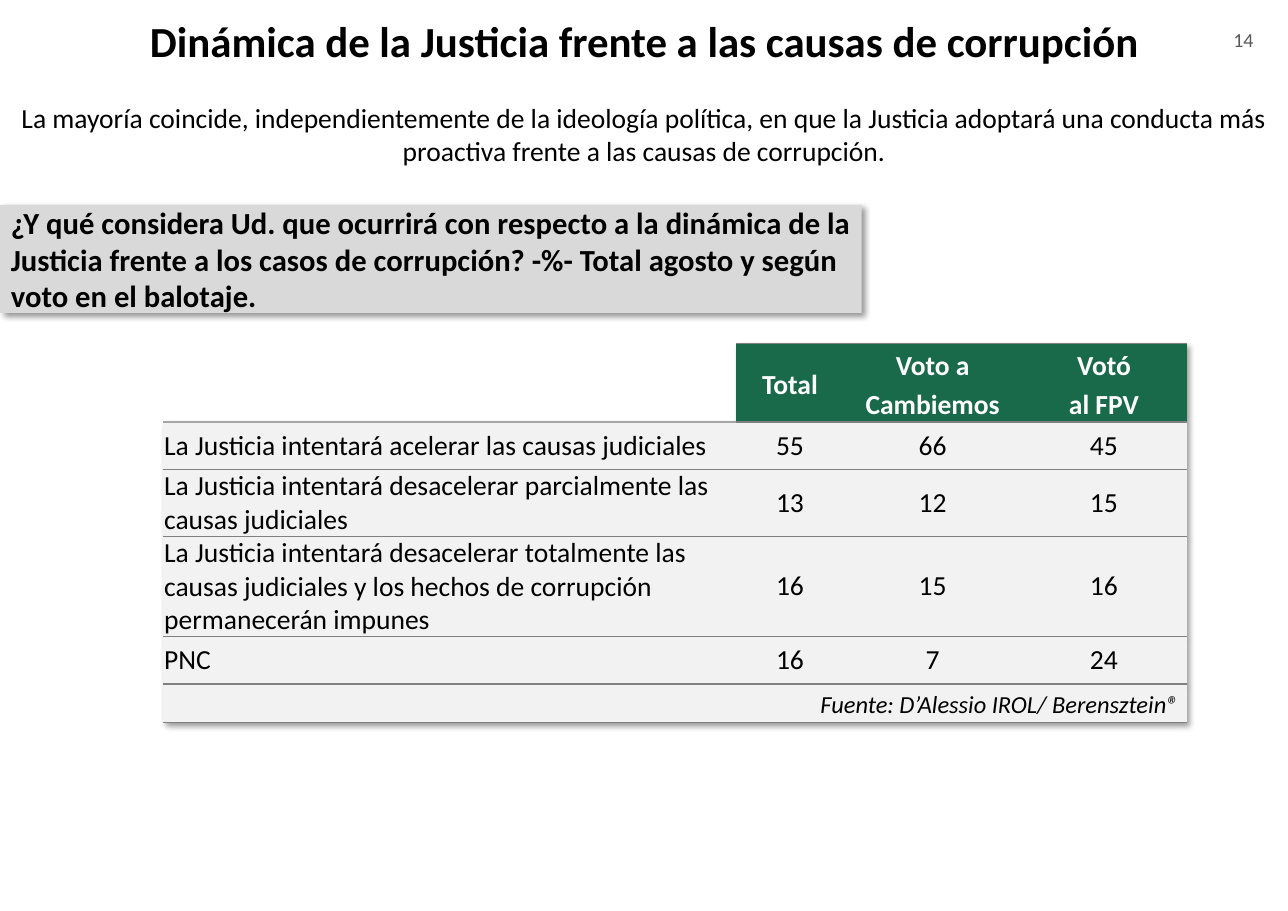
import lxml.etree
import pptx
import pptx.dml.color
import pptx.enum.shapes
import pptx.enum.text
import pptx.oxml
import pptx.oxml.ns
import pptx.util

PX = 9144
THEME = {
    "font": "Calibri",
    "black": "000000", "white": "FFFFFF", "number": "595959",
    "header": "19694B", "body": "F2F2F2", "question": "D9D9D9",
    "rule": "808080", "light_rule": "A6A6A6",
    "title_size": 28, "question_size": 20, "text_size": 18,
    "source_size": 16, "number_size": 13,
}
NO_STYLE = "{2D5ABB26-0587-4C30-8999-92F81FD0307C}"
ALIGN = pptx.enum.text.PP_ALIGN
MIDDLE = pptx.enum.text.MSO_ANCHOR.MIDDLE
rgb = pptx.dml.color.RGBColor.from_string
qn = pptx.oxml.ns.qn


def write(holder, text, size="text_size", color="black", bold=False, italic=False,
          align=ALIGN.CENTER, spacing=None, margins=(10, 5), anchor=MIDDLE):
    frame = holder.text_frame
    frame.word_wrap = True
    box = holder if hasattr(holder, "is_merge_origin") else frame
    box.vertical_anchor = anchor
    box.margin_left = box.margin_right = margins[0] * PX
    box.margin_top = box.margin_bottom = margins[1] * PX
    frame.text = text
    for paragraph in frame.paragraphs:
        paragraph.alignment = align
        if spacing:
            paragraph.line_spacing = spacing
        for run in paragraph.runs:
            run.font.name = THEME["font"]
            run.font.size = pptx.util.Pt(THEME[size])
            run.font.color.rgb = rgb(THEME[color])
            run.font.bold = bold
            run.font.italic = italic


def cast_shadow(effects):
    shadow = lxml.etree.SubElement(
        effects, qn("a:outerShdw"), blurRad="50800", dist="38100",
        dir="2700000", algn="tl", rotWithShape="0")
    color = lxml.etree.SubElement(shadow, qn("a:srgbClr"), val=THEME["black"])
    lxml.etree.SubElement(color, qn("a:alpha"), val="40000")


deck = pptx.Presentation()
deck.slide_width, deck.slide_height = 1169 * PX, 827 * PX
slide = deck.slides.add_slide(deck.slide_layouts[6])

texts = [
    ((1084, 20, 89, 44), "14",
     dict(size="number_size", color="number", anchor=pptx.enum.text.MSO_ANCHOR.TOP)),
    ((0, 86, 1169, 71),
     "La mayoría coincide, independientemente de la ideología política, en que la "
     "Justicia adoptará una conducta más proactiva frente a las causas de corrupción.", {}),
    ((0, -10, 1169, 94), "Dinámica de la Justicia frente a las causas de corrupción",
     dict(size="title_size", bold=True, margins=(11, 6))),
]
for bounds, text, style in texts:
    write(slide.shapes.add_textbox(*(length * PX for length in bounds)), text, **style)

columns = [520, 98, 161, 150]
heights = [71, 43, 61, 91, 43, 35]
rows = [
    ("", "Total", "Voto a Cambiemos", "Votó\nal FPV"),
    ("La Justicia intentará acelerar las causas judiciales", "55", "66", "45"),
    ("La Justicia intentará desacelerar parcialmente las causas judiciales", "13", "12", "15"),
    ("La Justicia intentará desacelerar totalmente las causas judiciales y los hechos "
     "de corrupción permanecerán impunes", "16", "15", "16"),
    ("PNC", "16", "7", "24"),
    ("Fuente: D’Alessio IROL/ Berensztein®", "", "", ""),
]
results_frame = slide.shapes.add_table(
    len(rows), len(columns), 148 * PX, 312 * PX, sum(columns) * PX, sum(heights) * PX)
results = results_frame.table
results.first_row = results.horz_banding = False
properties = results._tbl.tblPr
properties.find(qn("a:tableStyleId")).text = NO_STYLE
effects = pptx.oxml.parse_xml(f'<a:effectLst {pptx.oxml.ns.nsdecls("a")}/>')
properties.insert(0, effects)
cast_shadow(effects)
for column, width in zip(results.columns, columns):
    column.width = width * PX
for row, height in zip(results.rows, heights):
    row.height = height * PX

last = len(rows) - 1
results.cell(last, 0).merge(results.cell(last, len(columns) - 1))
for r, values in enumerate(rows):
    for c, value in enumerate(values):
        cell = results.cell(r, c)
        corner = r == 0 and c == 0
        if corner:
            cell.fill.background()
        else:
            cell.fill.solid()
            cell.fill.fore_color.rgb = rgb(THEME["body" if r else "header"])
        if r == 0:
            style = dict(color="white", bold=True, spacing=1.15, margins=(7, 0))
        elif r == last:
            style = dict(size="source_size", italic=True, align=ALIGN.RIGHT,
                         spacing=1.15, margins=(7, 0))
        else:
            style = dict(align=ALIGN.CENTER if c else ALIGN.LEFT, margins=(1, 0))
        write(cell, value, **style)

        edges = {"a:lnT": "light_rule" if r == 1 and c == 0 else "rule",
                 "a:lnB": "light_rule" if corner else "rule"}
        if corner:
            del edges["a:lnT"]
        cell_properties = cell._tc.get_or_add_tcPr()
        for position, (edge, color) in enumerate(edges.items()):
            line = lxml.etree.Element(qn(edge), w="12700")
            fill = lxml.etree.SubElement(line, qn("a:solidFill"))
            lxml.etree.SubElement(fill, qn("a:srgbClr"), val=THEME[color])
            cell_properties.insert(position, line)

question = slide.shapes.add_shape(
    pptx.enum.shapes.MSO_SHAPE.RECTANGLE, 0, 186 * PX, 782 * PX, 98 * PX)
question.fill.solid()
question.fill.fore_color.rgb = rgb(THEME["question"])
question.line.fill.background()
question.shadow.inherit = False
cast_shadow(question._element.spPr.find(qn("a:effectLst")))
write(question,
      "¿Y qué considera Ud. que ocurrirá con respecto a la dinámica de la Justicia frente "
      "a los casos de corrupción? -%- Total agosto y según voto en el balotaje.",
      size="question_size", bold=True, align=ALIGN.LEFT)

deck.save("out.pptx")
